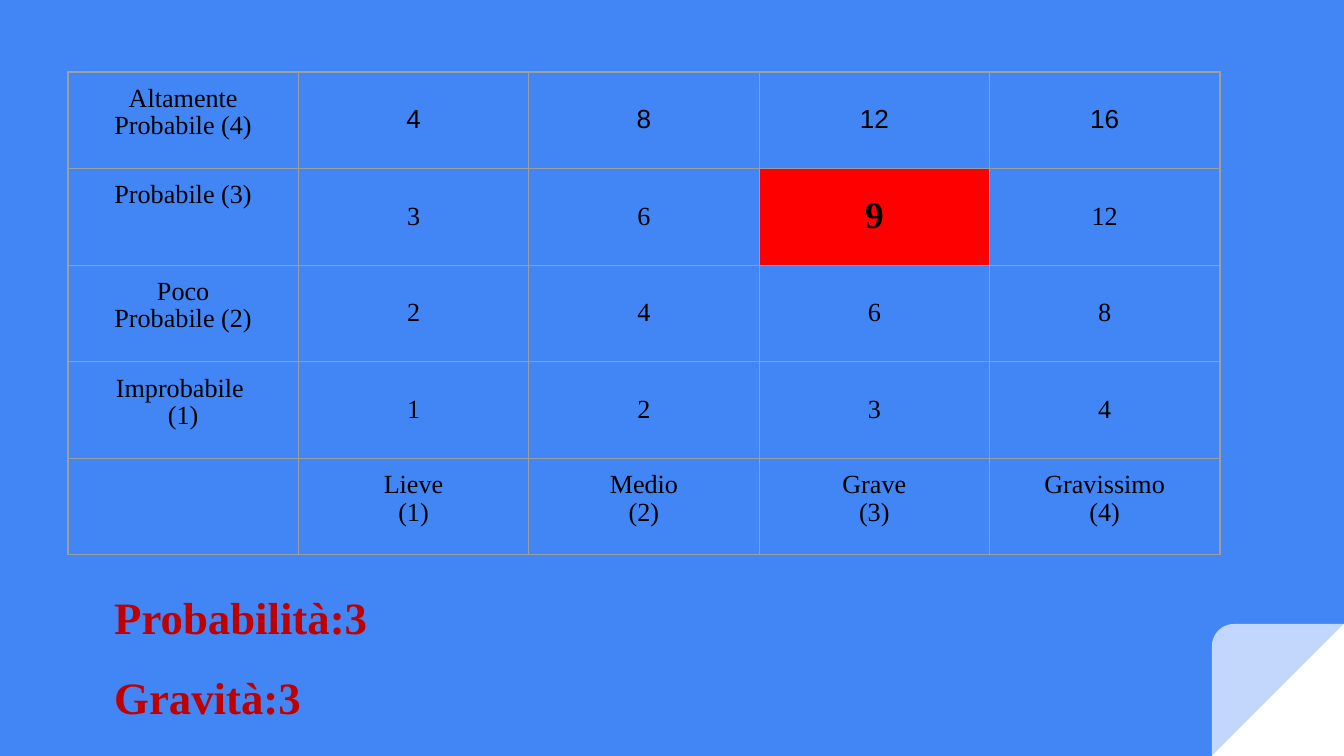
import pptx
import pptx.dml.color
import pptx.enum.shapes
import pptx.enum.text
import pptx.oxml
import pptx.oxml.ns
import pptx.util
from lxml import etree

SCALE = 914400 / 134.4
COLORS = {"bg": "4285F4", "white": "FFFFFF", "grid": "9E9E9E",
          "text": "000000", "risk": "FF0000", "result": "C00000"}
SERIF, SANS = "Times New Roman", "Arial"
SHAPE = pptx.enum.shapes.MSO_SHAPE
ANCHOR = pptx.enum.text.MSO_ANCHOR
ALIGN = pptx.enum.text.PP_ALIGN

PROBABILITIES = ["Altamente\nProbabile (4)", "Probabile (3)",
                 "Poco\nProbabile (2)", "Improbabile \n(1)"]
SEVERITIES = ["Lieve\n(1)", "Medio\n(2)", "Grave\n(3)", "Gravissimo\n(4)"]
ACTUAL = (3, 3)


def px(n):
    return pptx.util.Emu(round(n * SCALE))


def rgb(name):
    return pptx.dml.color.RGBColor.from_string(COLORS[name])


def fill_text(tf, text, color, para, font):
    """Write one paragraph per line, with dicts of paragraph and font values."""
    for i, line in enumerate(text.split("\n")):
        p = tf.add_paragraph() if i else tf.paragraphs[0]
        for key, value in para.items():
            setattr(p, key, value)
        r = p.add_run()
        r.text = line
        r.font.color.rgb = rgb(color)
        for key, value in font.items():
            setattr(r.font, key, value)


def set_margins(obj):
    for side in ("left", "top", "right", "bottom"):
        setattr(obj, f"margin_{side}", pptx.util.Inches(0.1))


def add_borders(cell):
    tc_pr = cell._tc.get_or_add_tcPr()
    for side in ("lnL", "lnR", "lnT", "lnB"):
        tc_pr.append(pptx.oxml.parse_xml(
            f'<a:{side} {pptx.oxml.ns.nsdecls("a")} w="9525"><a:solidFill>'
            f'<a:srgbClr val="{COLORS["grid"]}"/></a:solidFill></a:{side}>'))


def folded_corner(s, x, y, size):
    for kind, alpha in ((SHAPE.RIGHT_TRIANGLE, 100), (SHAPE.ROUND_1_RECTANGLE, 68)):
        sp = s.shapes.add_shape(kind, px(x), px(y), px(size), px(size))
        sp.shadow.inherit = False
        sp.line.fill.background()
        sp.fill.solid()
        sp.fill.fore_color.rgb = rgb("white")
        sp._element.spPr.xfrm.set("flipH", "1")
        if alpha < 100:
            clr = sp._element.spPr.find(".//" + pptx.oxml.ns.qn("a:srgbClr"))
            etree.SubElement(clr, pptx.oxml.ns.qn("a:alpha"), val=str(alpha * 1000))


def risk_matrix(s, x, y, w, h):
    """Table of probability times severity, with the actual risk marked."""
    rows = [[label] + [str((4 - i) * severity) for severity in range(1, 5)]
            for i, label in enumerate(PROBABILITIES)]
    rows.append([""] + SEVERITIES)
    table = s.shapes.add_table(len(rows), len(rows[0]),
                               px(x), px(y), px(w), px(h)).table
    table.first_row = table.horz_banding = False
    for col in table.columns:
        col.width = px(w / len(rows[0]))
    for i, row in enumerate(rows):
        table.rows[i].height = px(h / len(rows))
        for j, text in enumerate(row):
            cell = table.cell(i, j)
            is_value = j > 0 and i < 4
            is_actual = (4 - i, j) == ACTUAL
            set_margins(cell)
            cell.vertical_anchor = ANCHOR.MIDDLE if is_value else ANCHOR.TOP
            add_borders(cell)
            if is_actual:
                cell.fill.solid()
                cell.fill.fore_color.rgb = rgb("risk")
            else:
                cell.fill.background()
            if text:
                fill_text(cell.text_frame, text, "text",
                          {"alignment": ALIGN.CENTER, "line_spacing": 0.95},
                          {"name": SANS if is_value and i == 0 else SERIF,
                           "size": pptx.util.Pt(20 if is_actual else 14),
                           "bold": is_actual})


def result_text(s, x, y, w, h):
    tf = s.shapes.add_textbox(px(x), px(y), px(w), px(h)).text_frame
    tf.word_wrap = True
    set_margins(tf)
    fill_text(tf, "Probabilità:3\nGravità:3", "result",
              {"space_after": pptx.util.Pt(12), "line_spacing": 1.07},
              {"name": SERIF, "size": pptx.util.Pt(24), "bold": True})


def main():
    prs = pptx.Presentation()
    prs.slide_width, prs.slide_height = px(1344), px(756)
    s = prs.slides.add_slide(prs.slide_layouts[6])
    s.background.fill.solid()
    s.background.fill.fore_color.rgb = rgb("bg")
    folded_corner(s, 1212, 624, 132)
    risk_matrix(s, 68, 72, 1152, 483)
    result_text(s, 101, 573, 482, 134)
    prs.save("out.pptx")


if __name__ == "__main__":
    main()
